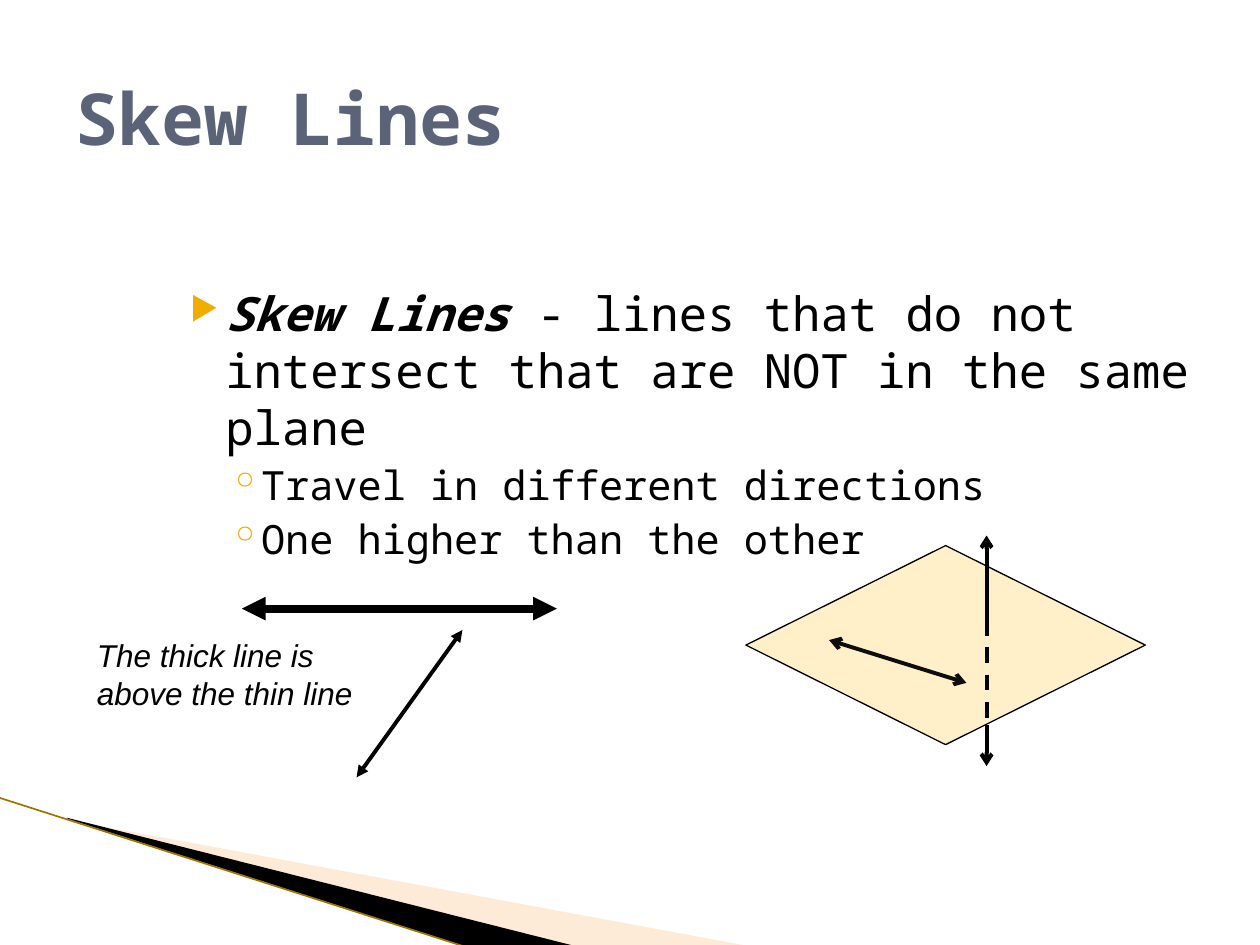
from lxml import etree
from pptx import Presentation
from pptx import util as u
from pptx.dml.color import RGBColor
from pptx.enum import dml, shapes, text
from pptx.oxml.ns import qn

COLORS = {
    "black": "000000", "ink": "0D0D0D", "title": "5A6378", "bullet": "F0AD00",
    "plane": "FFF0C9", "peach": "FCCF9B", "edge": "A07400",
}
MONO, SANS = "Noto Sans Mono", "Arial"


def add_line(start, end, width, color="black", head=None, tail=None, dash=False):
    """Draw a straight line with optional arrowheads at start (head) and end (tail)."""
    points = [u.Inches(v) for v in (*start, *end)]
    c = s.shapes.add_connector(shapes.MSO_CONNECTOR.STRAIGHT, *points)
    c.line.color.rgb = RGBColor.from_string(COLORS[color])
    c.line.width = u.Pt(width)
    if dash:
        c.line.dash_style = dml.MSO_LINE.DASH
    ln = c.line._get_or_add_ln()
    for tag, kind in (("a:headEnd", head), ("a:tailEnd", tail)):
        if kind:
            etree.SubElement(ln, qn(tag), type=kind)
    etree.SubElement(c._element.spPr, qn("a:effectLst"))


def add_text(box, paragraphs, anchor=text.MSO_ANCHOR.TOP):
    """Add a text box; each paragraph is a list of (text, size, font, color, bold, italic)."""
    tf = s.shapes.add_textbox(*[u.Inches(v) for v in box]).text_frame
    tf.word_wrap = True
    tf.vertical_anchor = anchor
    for i, runs in enumerate(paragraphs):
        p = tf.add_paragraph() if i else tf.paragraphs[0]
        for words, size, font, color, bold, italic in runs:
            r = p.add_run()
            r.text = words
            r.font.size, r.font.name = u.Pt(size), font
            r.font.bold, r.font.italic = bold, italic
            r.font.color.rgb = RGBColor.from_string(COLORS[color])
    return tf


prs = Presentation()
prs.slide_width, prs.slide_height = u.Inches(10), u.Inches(7.5)
s = prs.slides.add_slide(prs.slide_layouts[6])

# Corner decoration
wedges = [
    ("peach", 40, [(0.55, 6.51), (5.95, 7.51), (4.56, 7.51), (0.55, 6.5)]),
    ("black", 100, [(0.53, 6.49), (4.57, 7.51), (3.72, 7.52), (0.54, 6.5)]),
]
for color, opacity, points in wedges:
    points = [(u.Inches(x), u.Inches(y)) for x, y in points]
    fb = s.shapes.build_freeform(*points[0])
    fb.add_line_segments(points[1:])
    sp = fb.convert_to_shape()
    sp.shadow.inherit = False
    sp.fill.solid()
    sp.fill.fore_color.rgb = RGBColor.from_string(COLORS[color])
    sp.line.fill.background()
    if opacity < 100:
        rgb = sp._element.spPr.find(qn("a:solidFill"))[0]
        etree.SubElement(rgb, qn("a:alpha"), val=str(opacity * 1000))
add_line((-0.01, 6.33), (3.71, 7.52), 0.95, "edge")

# Definition
tf = add_text((1.29, 2.21, 8.5, 2.54), [
    [("Skew Lines", 27, MONO, "black", True, True),
     (" - lines that do not intersect that are NOT in the same plane",
      27, MONO, "black", False, False)],
    [("Travel in different directions", 23, MONO, "black", False, False)],
    [("One higher than the other", 23, MONO, "black", False, False)],
])
sub_bullet = (0.68, -0.25, "◦", 100)
for p, (left, indent, char, size) in zip(
        tf.paragraphs, [(0.4, -0.28, "▶", 68), sub_bullet, sub_bullet]):
    pPr = p._p.get_or_add_pPr()
    pPr.set("marL", str(u.Inches(left)))
    pPr.set("indent", str(u.Inches(indent)))
    clr = etree.SubElement(pPr, qn("a:buClr"))
    etree.SubElement(clr, qn("a:srgbClr"), val=COLORS["bullet"])
    etree.SubElement(pPr, qn("a:buSzPct"), val=str(size * 1000))
    etree.SubElement(pPr, qn("a:buChar"), char=char)
for p in tf.paragraphs[1:]:
    p.level = 1
    p.space_before = u.Pt(3.2)

add_text((0.5, 0.3, 9, 1.25), [[("Skew Lines", 41, MONO, "title", True, False)]],
         text.MSO_ANCHOR.MIDDLE)

# Thick line above thin line
add_line((2.83, 6.17), (3.67, 5), 2.25, head="triangle", tail="triangle")
add_line((1.92, 4.83), (4.42, 4.83), 4.5, head="triangle", tail="triangle")
add_text((0.67, 5, 2.25, 0.71),
         [[("The thick line is above the thin line", 18, SANS, "black", False, True)]])

# Plane with one line lying in it and one passing through
sp = s.shapes.add_shape(shapes.MSO_SHAPE.DIAMOND, u.Inches(5.92), u.Inches(4.33),
                        u.Inches(3.17), u.Inches(1.58))
sp.shadow.inherit = False
sp.fill.solid()
sp.fill.fore_color.rgb = RGBColor.from_string(COLORS["plane"])
sp.line.color.rgb = RGBColor.from_string(COLORS["black"])
sp.line.width = u.Pt(0.75)
add_line((6.58, 5.08), (7.67, 5.42), 2.25, "ink", head="arrow", tail="arrow")
add_line((7.83, 4.92), (7.83, 4.25), 2.25, tail="arrow")
add_line((7.83, 4.92), (7.83, 5.75), 2.25, dash=True)
add_line((7.83, 5.75), (7.83, 6.08), 2.25, tail="arrow")

prs.save("out.pptx")
